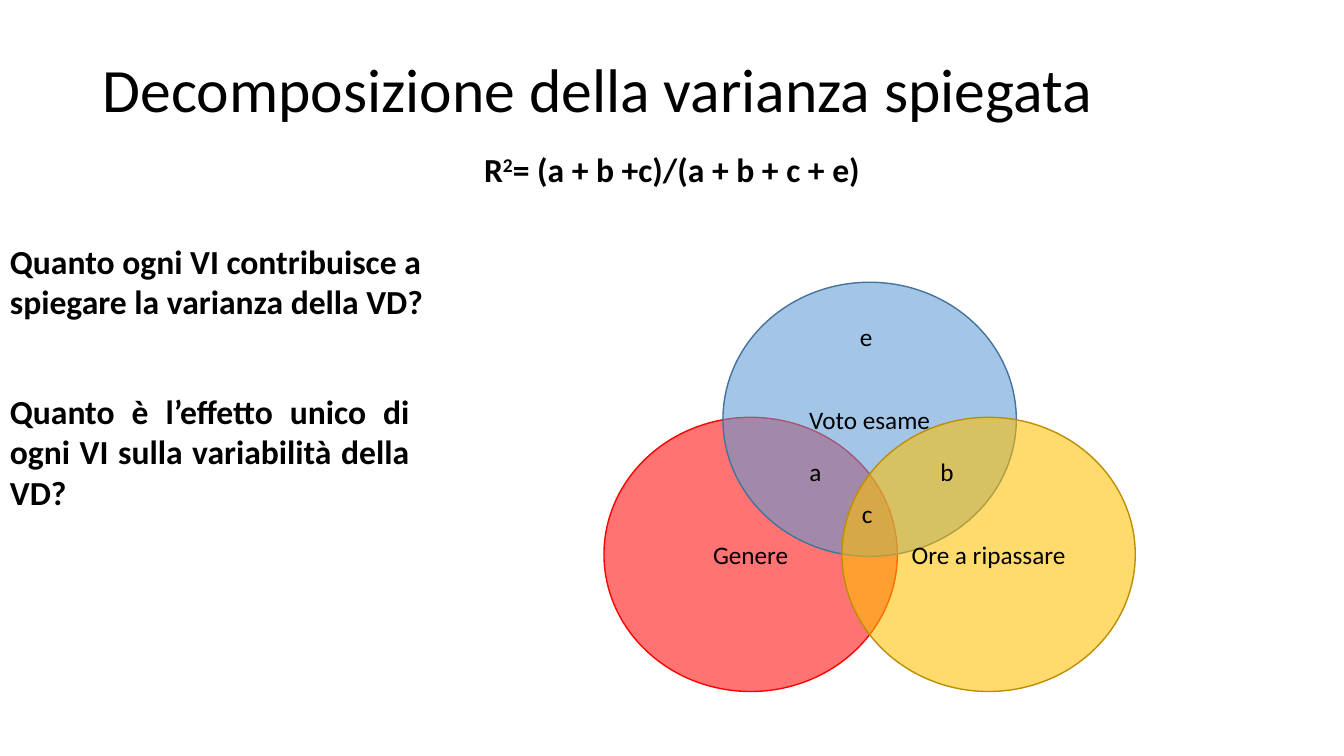
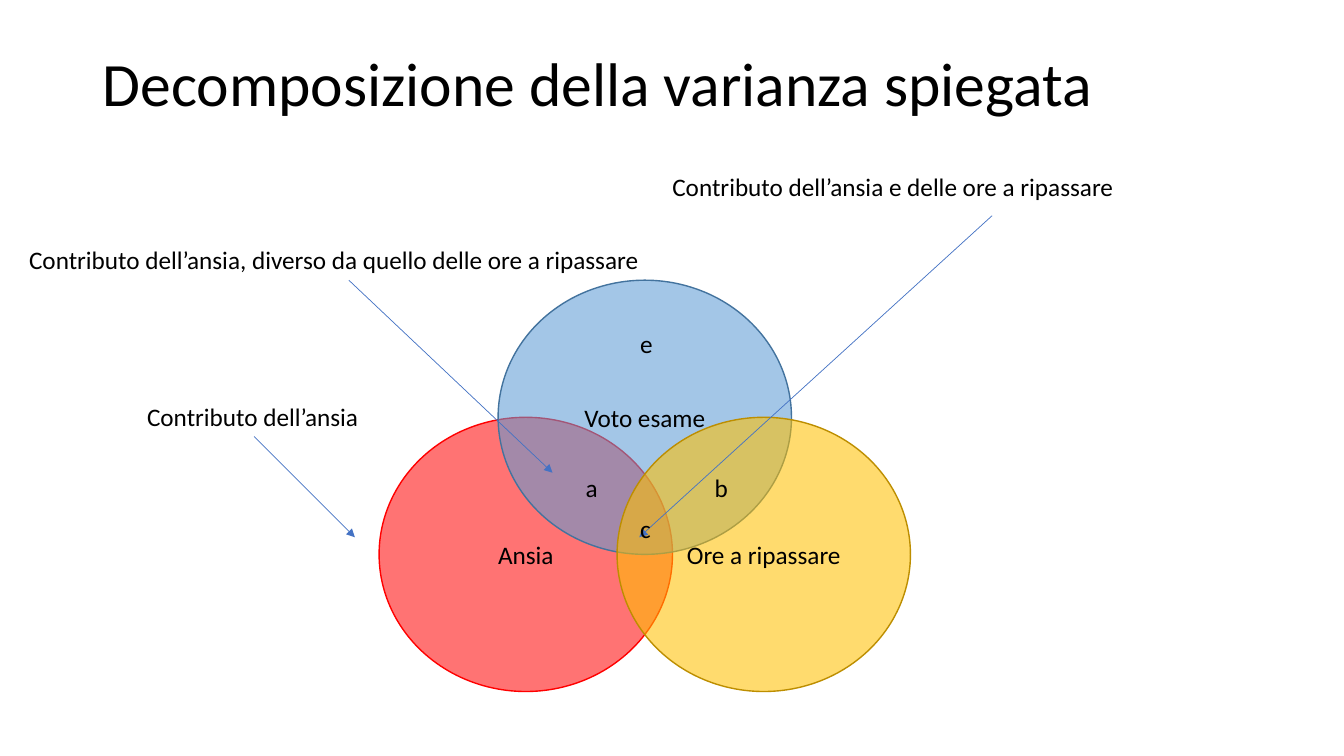
from dataclasses import dataclass

from lxml import etree
from pptx import Presentation
from pptx import util as u
from pptx.dml.color import RGBColor
from pptx.enum import shapes, text
from pptx.oxml.ns import qn

PX = 9144  # EMU per px, 100 px to the inch
FONT = "Calibri"
BLACK, ARROW_BLUE = "000000", "4472C4"
TITLE = "Decomposizione della varianza spiegata"

CIRCLE_W, CIRCLE_H, CIRCLE_STEP = 291, 272, 118
LOWER_TOP = 414
LETTER_W, LINE_H = 40, 40

ALIGN = text.PP_ALIGN
MIDDLE, TOP = text.MSO_ANCHOR.MIDDLE, text.MSO_ANCHOR.TOP


@dataclass(frozen=True)
class Circle:
    label: str
    top: int
    fill: str
    line: str
    opacity: int


@dataclass(frozen=True)
class Label:
    text: str
    x: int
    y: int
    w: int
    h: int = LINE_H
    size: int = 18
    bold: bool = False
    align: ALIGN = ALIGN.LEFT
    anchor: text.MSO_ANCHOR = TOP
    wrap: bool = True
    spacing: float = 1.0


@dataclass(frozen=True)
class Callout:
    label: Label
    start: tuple[int, int]
    end: tuple[int, int]


def px(n: int) -> u.Emu:
    return u.Emu(n * PX)


def rgb(color: str) -> RGBColor:
    return RGBColor.from_string(color)


def add_run(p, words: str, size: int, bold: bool = False):
    r = p.add_run()
    r.text = words
    for name, value in {"name": FONT, "size": u.Pt(size), "bold": bold}.items():
        setattr(r.font, name, value)
    r.font.color.rgb = rgb(BLACK)
    return r


def add_label(slide, label: Label):
    """Draw a text box and return its paragraph."""
    sp = slide.shapes.add_textbox(*map(px, (label.x, label.y, label.w, label.h)))
    tf = sp.text_frame
    tf.word_wrap = label.wrap
    tf.vertical_anchor = label.anchor
    p = tf.paragraphs[0]
    p.alignment = label.align
    p.line_spacing = label.spacing
    add_run(p, label.text, label.size, label.bold)
    return p


def add_title(slide, y: int) -> None:
    add_label(slide, Label(TITLE, 92, y, 1150, 145, 44, anchor=MIDDLE, spacing=0.9))


def add_circle(slide, circle: Circle, x: int) -> None:
    sp = slide.shapes.add_shape(
        shapes.MSO_SHAPE.OVAL, *map(px, (x, circle.top, CIRCLE_W, CIRCLE_H)))
    sp.shadow.inherit = False
    sp.fill.solid()
    sp.fill.fore_color.rgb = rgb(circle.fill)
    color = sp.fill._xPr.find(qn("a:solidFill"))[0]
    etree.SubElement(color, qn("a:alpha"), val=str(circle.opacity * 1000))
    sp.line.color.rgb = rgb(circle.line)
    sp.line.width = u.Pt(1)
    sp.text_frame.vertical_anchor = MIDDLE
    p = sp.text_frame.paragraphs[0]
    p.alignment = ALIGN.CENTER
    add_run(p, circle.label, 18)


def add_venn(slide, x: int, upper_top: int, first_predictor: str) -> None:
    circles = (
        Circle(first_predictor, LOWER_TOP, "FF0000", "FF0000", 55),
        Circle("Voto esame", upper_top, "5B9BD5", "43739E", 56),
        Circle("Ore a ripassare", LOWER_TOP, "FFC000", "BD8E00", 57),
    )
    for i, circle in enumerate(circles):
        add_circle(slide, circle, x + i * CIRCLE_STEP)


def add_letters(slide, places: dict[str, tuple[int, int]]) -> None:
    """Name the areas of the diagram."""
    for letter, (x, y) in places.items():
        add_label(slide, Label(letter, x, y, LETTER_W))


def add_callout(slide, callout: Callout) -> None:
    line = slide.shapes.add_connector(
        shapes.MSO_CONNECTOR.STRAIGHT, *map(px, callout.start + callout.end))
    line.line.color.rgb = rgb(ARROW_BLUE)
    line.line.width = u.Pt(0.5)
    etree.SubElement(line.line._get_or_add_ln(), qn("a:tailEnd"), type="triangle")
    etree.SubElement(line._element.spPr, qn("a:effectLst"))
    add_label(slide, callout.label)


def build_formula_slide(slide) -> None:
    add_title(slide, 19)
    add_venn(slide, 599, 280, "Genere")
    add_label(slide, Label(
        "Quanto ogni VI contribuisce a spiegare la varianza della VD?",
        0, 234, 498, 91, 24, True))
    add_label(slide, Label(
        "Quanto è l’effetto unico di ogni VI sulla variabilità della VD?",
        0, 383, 416, 131, 24, True, ALIGN.JUSTIFY))
    add_letters(slide, {"a": (793, 448), "b": (923, 448), "c": (845, 489), "e": (843, 314)})
    p = add_label(slide, Label("R", 0, 143, 1333, 50, 24, True, ALIGN.CENTER))
    exponent = add_run(p, "2", 24, True)
    exponent.font._element.set("baseline", "30000")
    add_run(p, "= (a + b +c)/(a + b + c + e)", 24, True)


def build_contribution_slide(slide) -> None:
    add_title(slide, 13)
    add_venn(slide, 376, 278, "Ansia")
    callouts = (
        Callout(Label("Contributo dell’ansia", 136, 393, 232, wrap=False),
                (252, 433), (352, 533)),
        Callout(Label("Contributo dell’ansia, diverso da quello delle ore a ripassare",
                      19, 237, 654, wrap=False),
                (346, 278), (548, 469)),
        Callout(Label("Contributo dell’ansia e delle ore a ripassare",
                      657, 165, 463, wrap=False),
                (984, 214), (634, 533)),
    )
    for callout in callouts:
        add_callout(slide, callout)
    add_letters(slide, {"a": (571, 464), "b": (699, 464), "c": (625, 504), "e": (625, 321)})


def main() -> None:
    prs = Presentation()
    prs.slide_width, prs.slide_height = px(1333), px(750)
    for build in (build_formula_slide, build_contribution_slide):
        build(prs.slides.add_slide(prs.slide_layouts[6]))
    prs.save("out.pptx")


if __name__ == "__main__":
    main()
